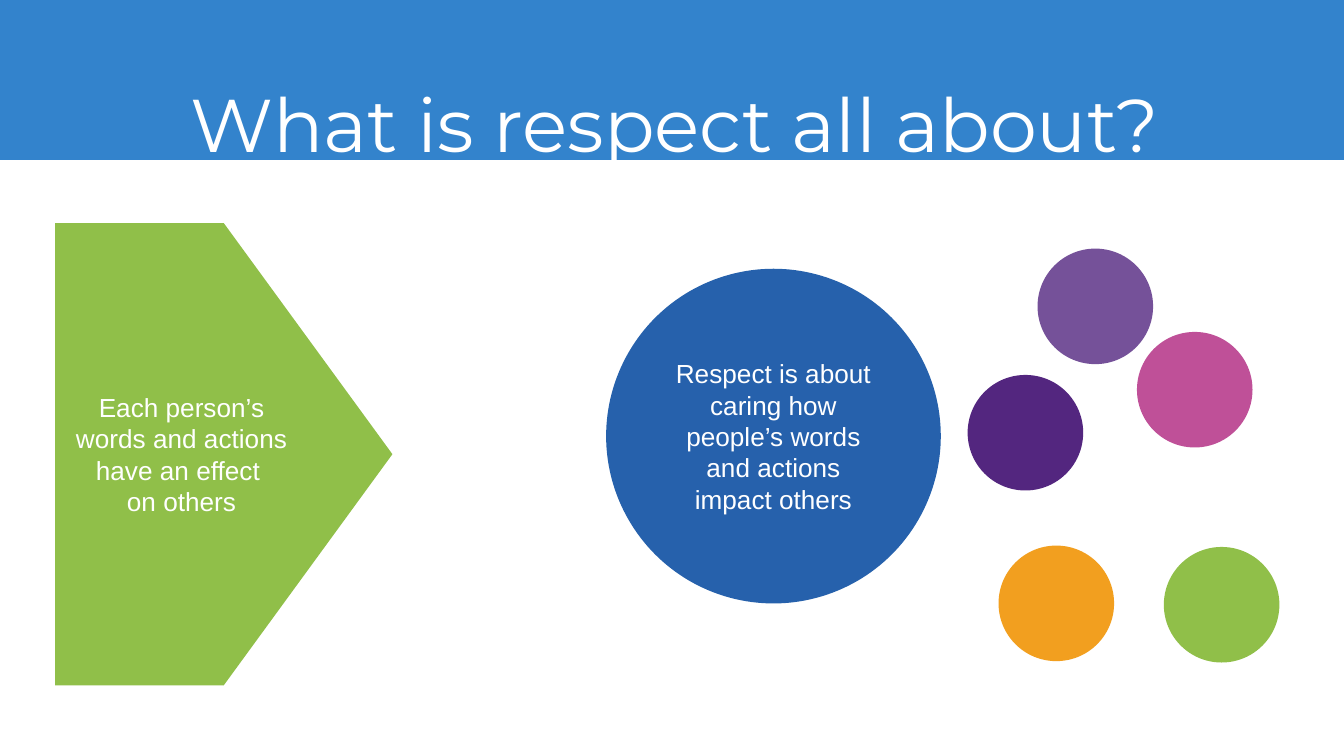
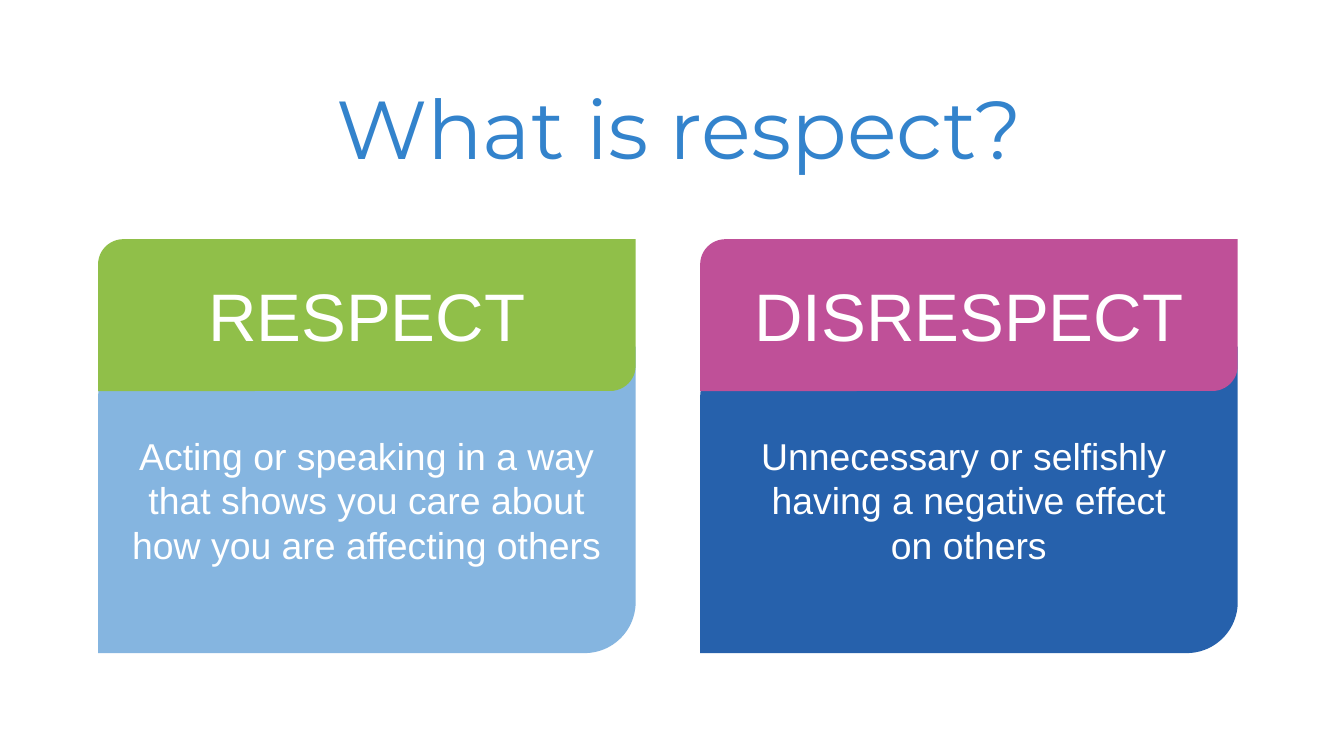
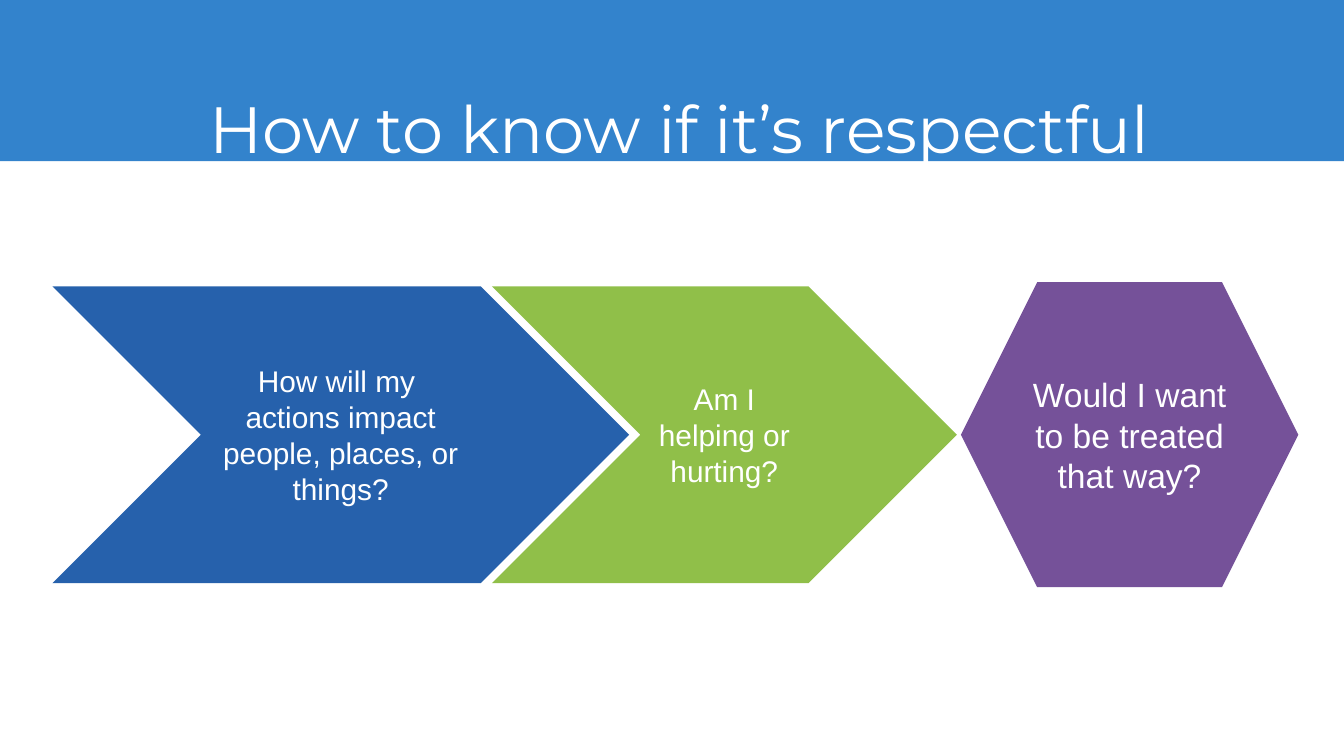
from dataclasses import dataclass

from pptx import Presentation
from pptx.dml.color import RGBColor
from pptx.enum import shapes, text
from pptx.shapes.autoshape import Shape
from pptx.slide import Slide
from pptx.util import Inches, Pt

WHITE = "FFFFFF"
SKY = "3383CC"
PALE_BLUE = "85B5E0"
BLUE = "2661AC"
GREEN = "90BF49"
PURPLE = "755199"
DARK_PURPLE = "53267F"
ORANGE = "F29F1F"
PINK = "BF5098"

SLIDE_WIDTH = 10
SLIDE_HEIGHT = SLIDE_WIDTH * 9 / 16
TITLE_FONT = "Montserrat"
BODY_FONT = "Arial"
TITLE_HEIGHT = 0.94
DOT_SIZE = 0.86

Kind = shapes.MSO_SHAPE


@dataclass
class Box:
    left: float
    top: float
    width: float
    height: float

    def lengths(self) -> list[Inches]:
        return [Inches(n) for n in (self.left, self.top, self.width, self.height)]


@dataclass
class Figure:
    kind: Kind
    box: Box
    color: str
    size: int = 0
    paragraphs: tuple[str, ...] = ()


@dataclass
class Dot:
    left: float
    top: float
    color: str


@dataclass
class Card:
    heading: str
    heading_color: str
    body: tuple[str, ...]
    body_color: str


def rgb(color: str) -> RGBColor:
    return RGBColor.from_string(color)


def write(shape: Shape, paragraphs: tuple[str, ...], size: int,
          font: str = BODY_FONT, color: str = WHITE) -> None:
    """Write centred paragraphs; a newline inside one becomes a line break."""
    frame = shape.text_frame
    frame.word_wrap = True
    frame.vertical_anchor = text.MSO_ANCHOR.MIDDLE
    for index, wording in enumerate(paragraphs):
        paragraph = frame.add_paragraph() if index else frame.paragraphs[0]
        paragraph.alignment = text.PP_ALIGN.CENTER
        for number, line in enumerate(wording.split("\n")):
            if number:
                paragraph.add_line_break()
            run = paragraph.add_run()
            run.text = line
            run.font.name = font
            run.font.size = Pt(size)
            run.font.color.rgb = rgb(color)


def draw(parent, figure: Figure) -> None:
    """Draw a flat figure on a slide's shapes or in a group's shapes."""
    shape = parent.add_shape(figure.kind, *figure.box.lengths())
    shape.shadow.inherit = False
    shape.fill.solid()
    shape.fill.fore_color.rgb = rgb(figure.color)
    shape.line.fill.background()
    if figure.paragraphs:
        write(shape, figure.paragraphs, figure.size)


def add_band(slide: Slide, top: float, height: float) -> None:
    draw(slide.shapes, Figure(Kind.RECTANGLE, Box(0, top, SLIDE_WIDTH, height), SKY))


def add_title(slide: Slide, wording: str, size: int, color: str = WHITE,
              left: float = 0.53, top: float = 0.47, width: float = 9.05) -> None:
    box = Box(left, top, width, TITLE_HEIGHT)
    write(slide.shapes.add_textbox(*box.lengths()), (wording,), size, TITLE_FONT, color)


def build_about(slide: Slide) -> None:
    add_band(slide, 0, 1.19)
    add_title(slide, "What is respect all about?", 40, left=0.72, top=0.44, width=8.6)
    draw(slide.shapes, Figure(
        Kind.PENTAGON, Box(0.41, 1.66, 2.51, 3.44), GREEN, 14,
        ("Each person’s words and actions have an effect ", "on others")))
    people = slide.shapes.add_group_shape()
    for dot in (
        Dot(7.2, 2.79, DARK_PURPLE),
        Dot(8.66, 4.07, GREEN),
        Dot(7.72, 1.85, PURPLE),
        Dot(7.43, 4.06, ORANGE),
        Dot(8.46, 2.47, PINK),
    ):
        box = Box(dot.left, dot.top, DOT_SIZE, DOT_SIZE)
        draw(people.shapes, Figure(Kind.OVAL, box, dot.color))
    draw(slide.shapes, Figure(
        Kind.OVAL, Box(4.51, 2, 2.49, 2.49), BLUE, 14,
        ("Respect is about caring how people’s words and actions impact others",)))


def build_definition(slide: Slide) -> None:
    add_title(slide, "What is respect?", 44, SKY)
    cards = (
        Card("RESPECT", GREEN,
             ("Acting or speaking in a way that shows you care about "
              "how you are affecting others",), PALE_BLUE),
        Card("DISRESPECT", PINK,
             ("Unnecessary or selfishly \nhaving a negative effect", "on others"), BLUE),
    )
    for column, card in enumerate(cards):
        left = 0.73 + 4.48 * column
        draw(slide.shapes, Figure(
            Kind.ROUND_2_DIAG_RECTANGLE, Box(left, 2.58, 4, 2.28),
            card.body_color, 20, card.body))
        draw(slide.shapes, Figure(
            Kind.ROUND_2_DIAG_RECTANGLE, Box(left, 1.78, 4, 1.13),
            card.heading_color, 36, (card.heading,)))


def build_questions(slide: Slide) -> None:
    add_band(slide, -0.02, 1.22)
    add_title(slide, "How to know if it’s respectful", 35, top=0.48)
    for question in (
        Figure(Kind.HEXAGON, Box(7.15, 2.1, 2.51, 2.27), PURPLE, 18,
               ("Would I want to be treated that way?",)),
        Figure(Kind.CHEVRON, Box(0.39, 2.13, 4.29, 2.21), BLUE, 16,
               ("How will my \nactions impact people, places, or things?",)),
        Figure(Kind.CHEVRON, Box(3.66, 2.13, 3.46, 2.21), GREEN, 16,
               ("Am I helping or hurting?",)),
    ):
        draw(slide.shapes, question)


def main() -> None:
    presentation = Presentation()
    presentation.slide_width = Inches(SLIDE_WIDTH)
    presentation.slide_height = Inches(SLIDE_HEIGHT)
    blank = presentation.slide_layouts[6]
    for build in (build_about, build_definition, build_questions):
        build(presentation.slides.add_slide(blank))
    presentation.save("out.pptx")


if __name__ == "__main__":
    main()
